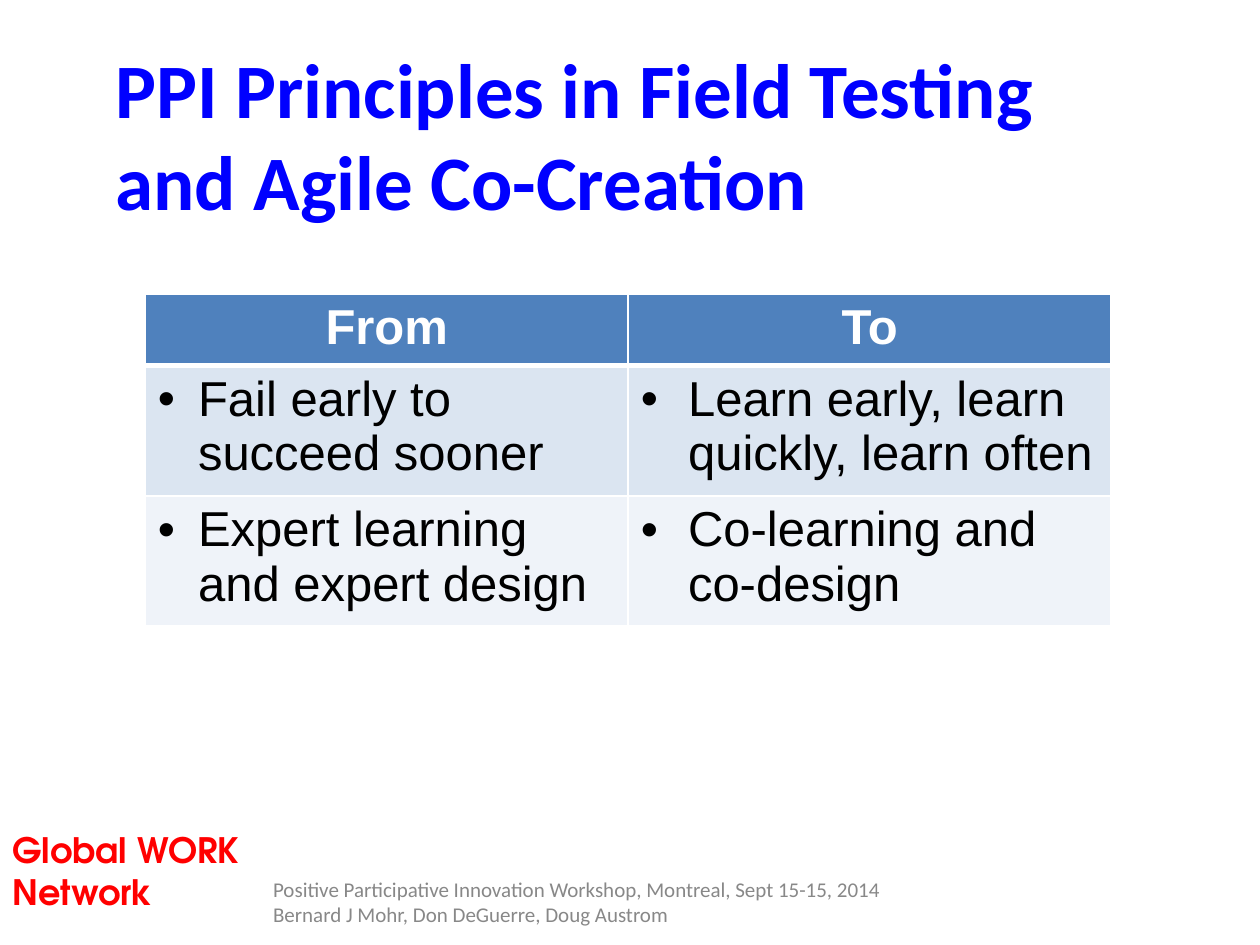
import pptx
import pptx.util
import pptx.dml.color
import pptx.enum.text
import pptx.oxml
import pptx.oxml.ns
import lxml.etree

Pt = pptx.util.Pt
Align = pptx.enum.text.PP_ALIGN
Anchor = pptx.enum.text.MSO_ANCHOR
qn = pptx.oxml.ns.qn

HUES = {
    "title": "0000FF", "brand": "FF0000", "foot": "888888",
    "head": "4F81BD", "odd": "DBE5F1", "even": "EFF3F9",
    "white": "FFFFFF", "black": "000000",
}


def hue(name):
    return pptx.dml.color.RGBColor.from_string(HUES[name])


class Deck:
    def __init__(self, wide, high):
        self.show = pptx.Presentation()
        self.show.slide_width, self.show.slide_height = Pt(wide), Pt(high)
        self.slide = self.show.slides.add_slide(self.show.slide_layouts[6])

    def style(self, para, face, size, color, bold=False):
        font = para.font
        font.name, font.size, font.bold = face, Pt(size), bold
        font.color.rgb = hue(color)

    def text(self, words, box, face, size, color, bold=False, anchor=Anchor.TOP):
        frame = self.slide.shapes.add_textbox(*map(Pt, box)).text_frame
        frame.word_wrap = True
        frame.vertical_anchor = anchor
        para = frame.paragraphs[0]
        para.text = words
        self.style(para, face, size, color, bold)

    def bullet(self, para, indent):
        props = para._p.get_or_add_pPr()
        props.set("marL", str(Pt(indent)))
        props.set("indent", str(-Pt(indent)))
        tint = lxml.etree.SubElement(props, qn("a:buClr"))
        lxml.etree.SubElement(tint, qn("a:srgbClr"), val=HUES["black"])
        lxml.etree.SubElement(props, qn("a:buFont"), typeface="Arial")
        lxml.etree.SubElement(props, qn("a:buChar"), char="•")

    def border(self, cell, widths):
        props = cell._tc.get_or_add_tcPr()
        for spot, (side, width) in enumerate(widths.items()):
            line = lxml.etree.Element(qn("a:ln" + side), w=str(Pt(width)))
            fill = lxml.etree.SubElement(line, qn("a:solidFill"))
            lxml.etree.SubElement(fill, qn("a:srgbClr"), val=HUES["white"])
            props.insert(spot, line)

    def table(self, rows, left, top, wide, highs, indents):
        cols = len(indents)
        grid = self.slide.shapes.add_table(
            len(rows), cols, Pt(left), Pt(top), Pt(wide * cols), Pt(sum(highs))
        ).table
        for col in grid.columns:
            col.width = Pt(wide)
        for r, row in enumerate(rows):
            grid.rows[r].height = Pt(highs[r])
            head = r == 0
            for c, words in enumerate(row):
                cell = grid.cell(r, c)
                cell.fill.solid()
                cell.fill.fore_color.rgb = hue("head" if head else ("even", "odd")[r % 2])
                # A thick rule parts the header from the body
                self.border(cell, {"L": 1, "R": 1, "T": 3 if r == 1 else 1, "B": 3 if head else 1})
                para = cell.text_frame.paragraphs[0]
                para.text = words
                self.style(para, "Arial", 28, "white" if head else "black", head)
                if head:
                    para.alignment = Align.CENTER
                else:
                    self.bullet(para, indents[c])


def main():
    deck = Deck(720, 540)

    # Network name
    deck.text("Global WORK Network", (0, 470, 227.5, 32), "TeX Gyre Adventor", 20, "brand", True)

    # Title
    deck.text("PPI Principles in Field Testing and Agile Co-Creation",
              (59, 20, 600, 90), "Calibri", 44, "title", True)

    # Footer
    deck.text("Positive Participative Innovation Workshop, Montreal, Sept 15-15, 2014\v"
              "Bernard J Mohr, Don DeGuerre, Doug Austrom",
              (149, 500.5, 366, 29), "Calibri", 12, "foot", anchor=Anchor.MIDDLE)

    # From and to
    rows = [
        ("From", "To"),
        ("Fail early to succeed sooner", "Learn early, learn quickly, learn often"),
        ("Expert learning and expert design", "Co-learning and co-design"),
    ]
    deck.table(rows, 83, 168, 276, (38, 69.5, 69.5), (23, 27))

    deck.show.save("out.pptx")


if __name__ == "__main__":
    main()
